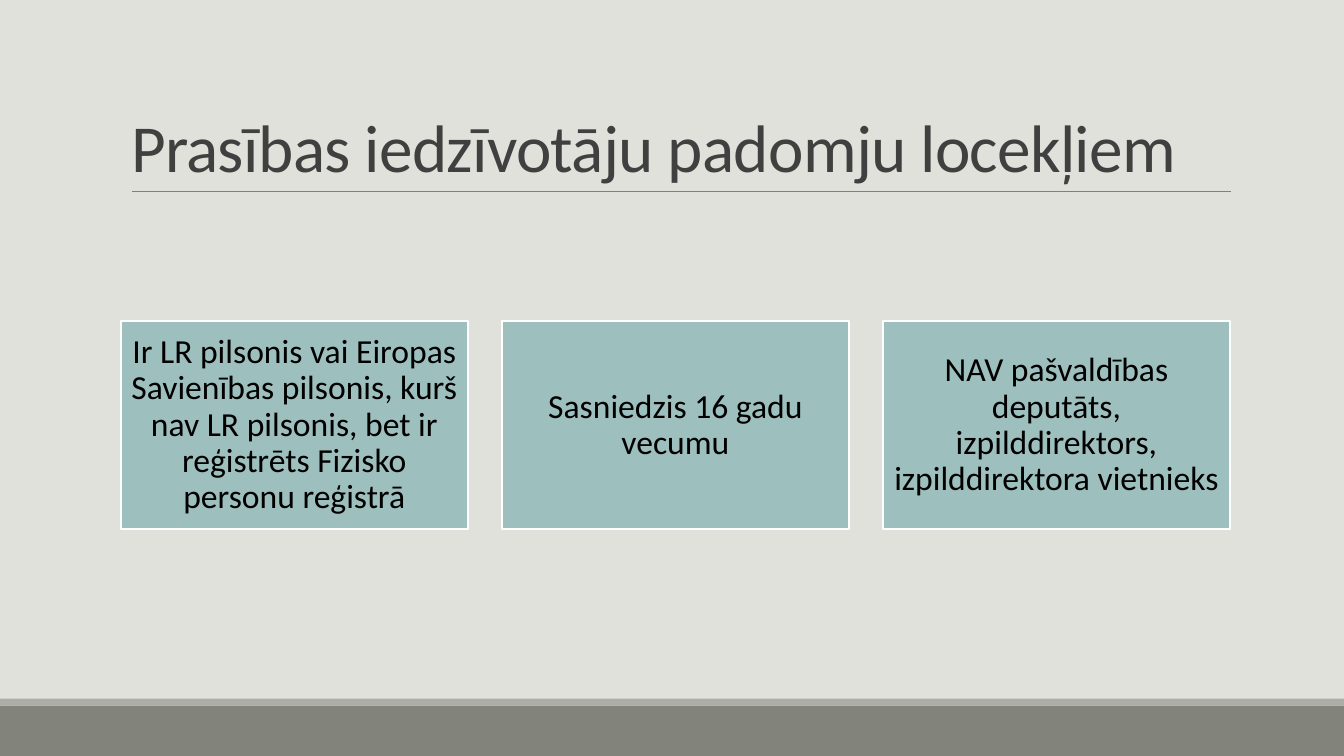
import pptx
import pptx.dml.color
import pptx.enum.shapes
import pptx.enum.text
import pptx.oxml
import pptx.oxml.ns
import pptx.util

Pt = pptx.util.Pt
ANCHOR = pptx.enum.text.MSO_ANCHOR
ALIGN = pptx.enum.text.PP_ALIGN
WIDTH, HEIGHT = 960, 540
COLORS = {
    "background": "E1E1DB", "footer": "82847C", "stripe": "ACADA8",
    "rule": "808080", "title": "404040", "card": "9DBFBE",
    "border": "FFFFFF", "text": "000000",
}
REQUIREMENTS = [
    "Ir LR pilsonis vai Eiropas Savienības pilsonis, kurš nav LR pilsonis, "
    "bet ir reģistrēts Fizisko personu reģistrā",
    "Sasniedzis 16 gadu vecumu",
    "NAV pašvaldības deputāts, izpilddirektors, izpilddirektora vietnieks",
]


def apply(target, values):
    """Set every attribute named in a dict of format values."""
    for name, value in values.items():
        setattr(target, name, value)


def color(name):
    """Return the named colour of the palette."""
    return pptx.dml.color.RGBColor.from_string(COLORS[name])


class SlideBuilder:
    """Holds the style and the current slide."""

    font = "Calibri"

    def __init__(self, presentation):
        """Add a title-only slide with a plain background."""
        self.slide = presentation.slides.add_slide(presentation.slide_layouts[5])
        fill = self.slide.background.fill
        fill.solid()
        fill.fore_color.rgb = color("background")

    def add_text(self, shape, text, size, color_name, frame, paragraph_format):
        """Fill a shape with one formatted paragraph and return its run."""
        apply(shape.text_frame, {
            "word_wrap": True, "auto_size": pptx.enum.text.MSO_AUTO_SIZE.NONE,
            **frame,
        })
        paragraph = shape.text_frame.paragraphs[0]
        apply(paragraph, paragraph_format)
        run = paragraph.add_run()
        run.text = text
        apply(run.font, {"name": self.font, "size": Pt(size)})
        run.font.color.rgb = color(color_name)
        return run

    def title(self, text, left, top, width, height):
        """Place and format the title placeholder."""
        shape = self.slide.shapes.title
        apply(shape, {"left": Pt(left), "top": Pt(top),
                      "width": Pt(width), "height": Pt(height)})
        run = self.add_text(shape, text, 48, "title",
                            {"vertical_anchor": ANCHOR.BOTTOM},
                            {"alignment": ALIGN.LEFT, "line_spacing": 0.85})
        run.font._element.set("spc", "-50")

    def rectangle(self, left, top, width, height, fill, border=None):
        """Add a flat rectangle with an optional border."""
        shape = self.slide.shapes.add_shape(
            pptx.enum.shapes.MSO_SHAPE.RECTANGLE,
            Pt(left), Pt(top), Pt(width), Pt(height))
        shape.shadow.inherit = False
        shape.fill.solid()
        shape.fill.fore_color.rgb = color(fill)
        if border:
            shape.line.color.rgb = color(border)
            shape.line.width = Pt(1.25)
        else:
            shape.line.fill.background()
        return shape

    def card(self, text, left, top, width, height):
        """Add a bordered box with centred text."""
        shape = self.rectangle(left, top, width, height, "card", "border")
        self.add_text(shape, text, 24, "text",
                      {"vertical_anchor": ANCHOR.MIDDLE,
                       "margin_left": Pt(6.8), "margin_right": Pt(6.8),
                       "margin_top": Pt(7.2), "margin_bottom": Pt(7.2)},
                      {"alignment": ALIGN.CENTER, "line_spacing": 0.9})

    def rule(self, left, right, top):
        """Add a thin horizontal line."""
        line = self.slide.shapes.add_connector(
            pptx.enum.shapes.MSO_CONNECTOR.STRAIGHT,
            Pt(left), Pt(top), Pt(right), Pt(top))
        line.line.color.rgb = color("rule")
        line.line.width = Pt(0.5)
        line._element.spPr.append(pptx.oxml.parse_xml(
            f"<a:effectLst {pptx.oxml.ns.nsdecls('a')}/>"))


def main():
    """Build and save the slide."""
    presentation = pptx.Presentation()
    apply(presentation, {"slide_width": Pt(WIDTH), "slide_height": Pt(HEIGHT)})
    builder = SlideBuilder(presentation)
    builder.rectangle(0, 504, WIDTH, 36, "footer")
    builder.rectangle(0, 499, WIDTH, 5, "stripe")
    builder.rule(94.3, 879, 136.6)
    builder.title("Prasības iedzīvotāju padomju locekļiem", 86.4, 22.3, 792, 114.5)
    card_width, gap = 247.7, 24.5
    for index, requirement in enumerate(REQUIREMENTS):
        builder.card(requirement, 86.4 + index * (card_width + gap),
                     229.5, card_width, 148.5)
    presentation.save("out.pptx")


if __name__ == "__main__":
    main()
